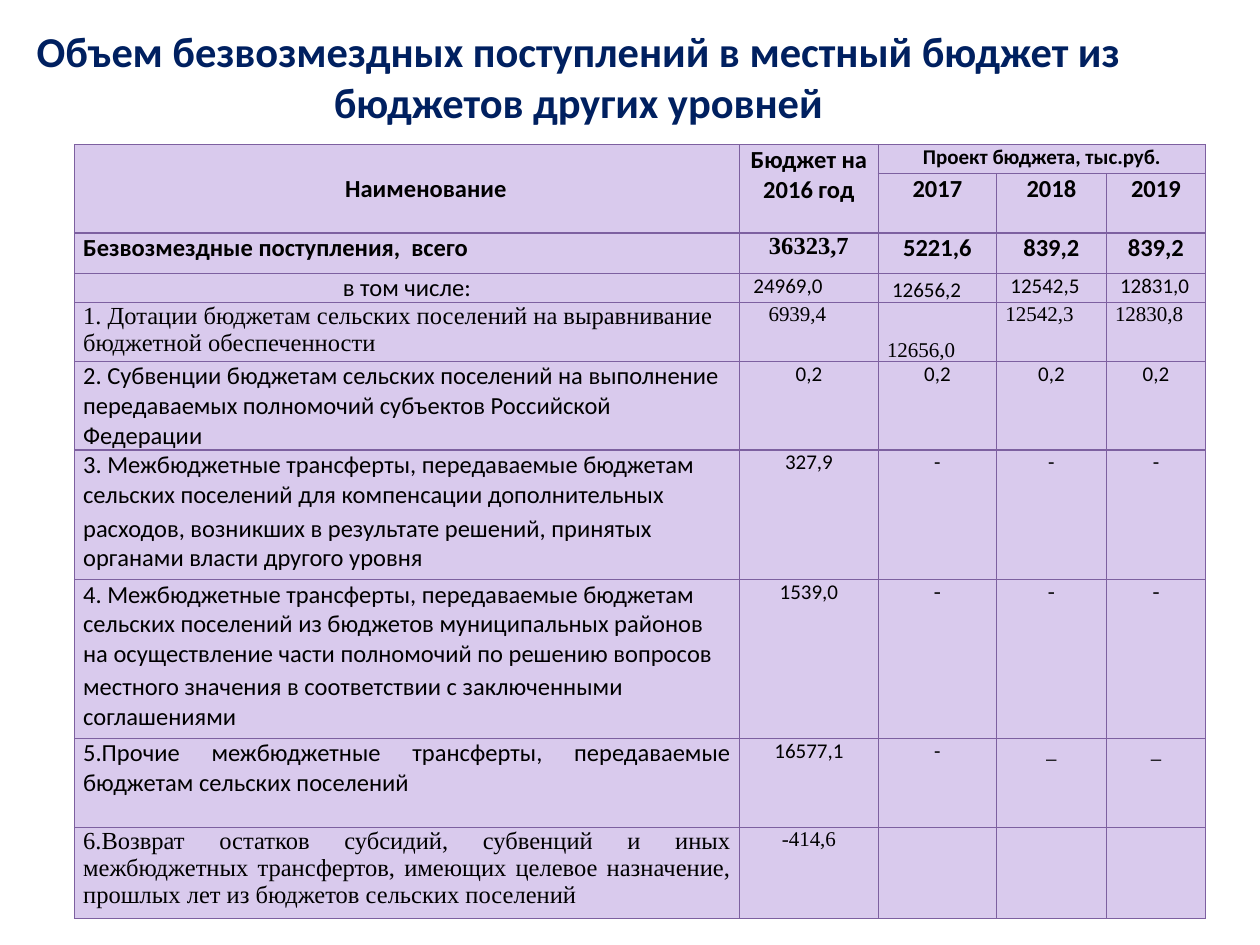
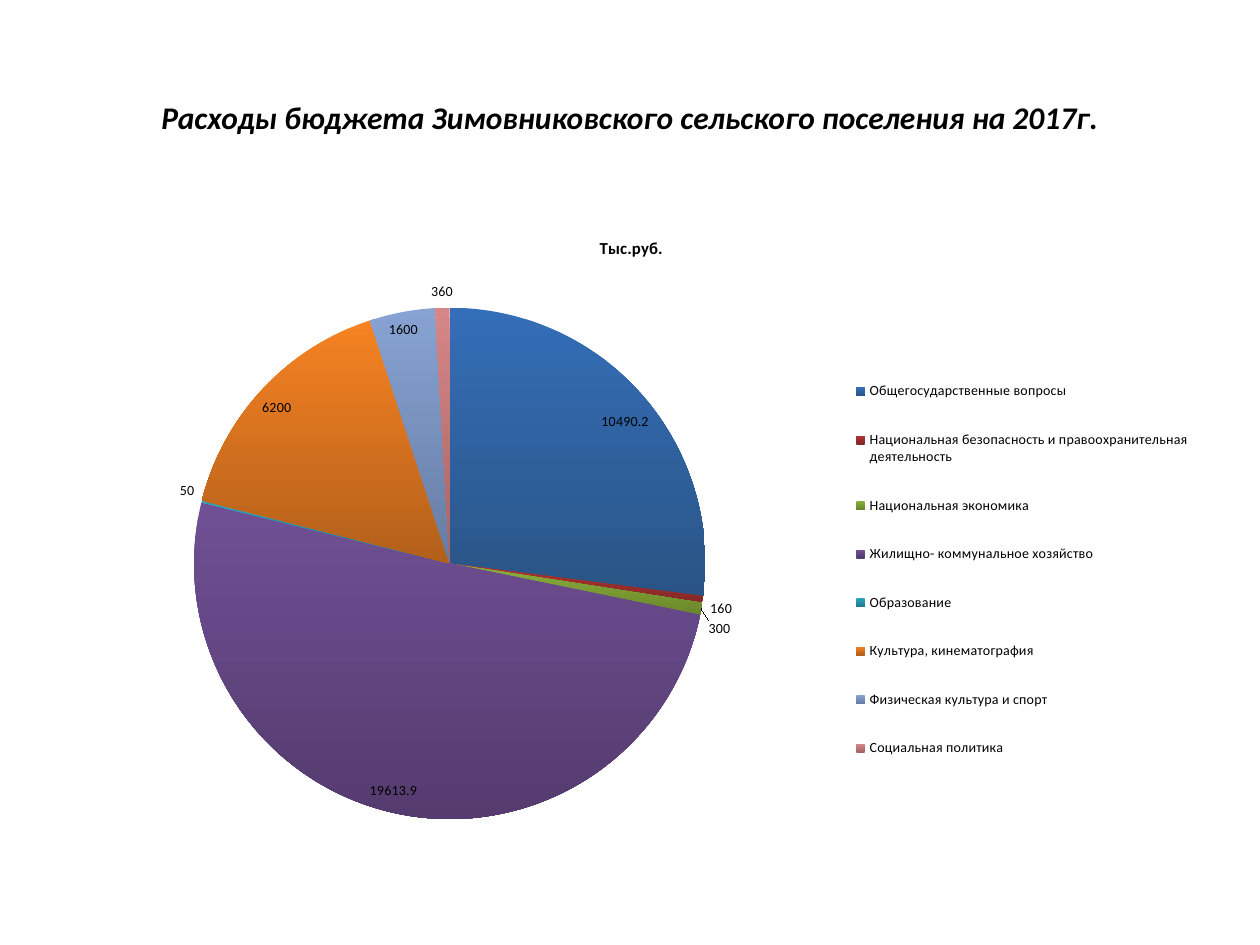
from lxml.etree import SubElement
from pptx import Presentation
from pptx.chart.data import CategoryChartData
from pptx.dml.color import RGBColor
from pptx.enum.chart import XL_CHART_TYPE as ChartType
from pptx.enum.chart import XL_LABEL_POSITION as LabelPos
from pptx.enum.chart import XL_LEGEND_POSITION as LegendPos
from pptx.enum.text import MSO_ANCHOR as Anchor
from pptx.enum.text import PP_ALIGN as Align
from pptx.oxml import parse_xml
from pptx.oxml.ns import nsdecls, qn
from pptx.util import Inches, Pt

BLACK = RGBColor(0x00, 0x00, 0x00)
NAVY = RGBColor(0x00, 0x20, 0x60)
LILAC = RGBColor(0xD9, 0xCA, 0xED)
BORDER = RGBColor(0x7D, 0x60, 0xA0)
SANS, SERIF = "Calibri", "Times New Roman"

# Budget table: names of the rows, then the amounts for 2016-2019
COLUMN_WIDTHS = [5.28, 1.1, 0.94, 0.87, 0.79]
ROW_HEIGHTS = [0.23, 0.47, 0.32, 0.23, 0.44, 0.7, 1.03, 1.26, 0.71, 0.72]
BUDGET = [
    ["Наименование", "Бюджет на 2016 год", "Проект бюджета, тыс.руб.", "", ""],
    ["", "", "2017", "2018", "2019"],
    ["Безвозмездные поступления,  всего", "36323,7", "5221,6", "839,2", "839,2"],
    ["в том числе:", "24969,0", "12656,2", "12542,5", "12831,0"],
    ["1. Дотации бюджетам сельских поселений на выравнивание бюджетной "
     "обеспеченности", "6939,4", "12656,0", "12542,3", "12830,8"],
    ["2. Субвенции бюджетам сельских поселений на выполнение передаваемых "
     "полномочий субъектов Российской Федерации", "0,2", "0,2", "0,2", "0,2"],
    ["3. Межбюджетные трансферты, передаваемые бюджетам сельских поселений "
     "для компенсации дополнительных\n"
     "расходов, возникших в результате решений, принятых органами власти "
     "другого уровня", "327,9", "-", "-", "-"],
    ["4. Межбюджетные трансферты, передаваемые бюджетам сельских поселений "
     "из бюджетов муниципальных районов на осуществление части полномочий "
     "по решению вопросов\n"
     "местного значения в соответствии с заключенными соглашениями",
     "1539,0", "-", "-", "-"],
    ["5.Прочие межбюджетные трансферты, передаваемые бюджетам сельских "
     "поселений", "16577,1", "-", "_", "_"],
    ["6.Возврат остатков субсидий, субвенций и иных межбюджетных "
     "трансфертов, имеющих целевое назначение, прошлых лет из бюджетов "
     "сельских поселений", "-414,6", "", "", ""],
]
HEADER_ROWS, TOTAL_ROW, INCLUDING_ROW, GRANTS_ROW = (0, 1), 2, 3, 4
SERIF_CELLS = ({(TOTAL_ROW, 1), (9, 0), (9, 1)}
               | {(GRANTS_ROW, col) for col in range(5)}
               | {(7, col) for col in (2, 3, 4)})
SPACE_BEFORE = {6: 2.4, 7: 1.6}
LEFT_INDENT = {(INCLUDING_ROW, col): 0.04 for col in range(1, 5)}
LEFT_INDENT[GRANTS_ROW, 1] = 0.16

# Expenses: section, amount, top and bottom colour of the slice
EXPENSES = [
    ("Общегосударственные вопросы", 10490.2, "346EB8", "2A5485"),
    ("Национальная безопасность и правоохранительная деятельность", 160,
     "AF3532", "852826"),
    ("Национальная экономика", 300, "8BB03C", "6A862B"),
    ("Жилищно- коммунальное хозяйство", 19613.9, "6F5095", "553B6E"),
    ("Образование", 50, "2BA3BE", "207C92"),
    ("Культура, кинематография", 6200, "F68222", "B3601B"),
    ("Физическая культура и спорт", 1600, "87A3D3", "667CA3"),
    ("Социальная политика", 360, "D68687", "A76465"),
]


def style_font(font, size, color=BLACK, bold=False, italic=False, name=SANS):
    font.name, font.size, font.bold, font.italic = name, Pt(size), bold, italic
    font.color.rgb = color


def add_title(slide, box, text, size, color, italic=False):
    frame = slide.shapes.add_textbox(*map(Inches, box)).text_frame
    frame.word_wrap = True
    frame.vertical_anchor = Anchor.MIDDLE
    heading = frame.paragraphs[0]
    heading.text, heading.alignment = text, Align.CENTER
    style_font(heading.font, size, color, bold=True, italic=italic)


def cell_alignment(row, col):
    if col == 0:
        if row in (0, INCLUDING_ROW):
            return Align.CENTER
        return Align.JUSTIFY if row >= 8 else Align.LEFT
    return Align.LEFT if row in (INCLUDING_ROW, GRANTS_ROW) else Align.CENTER


def add_borders(cell):
    props = cell._tc.get_or_add_tcPr()
    for position, side in enumerate(("lnL", "lnR", "lnT", "lnB")):
        props.insert(position, parse_xml(
            f'<a:{side} {nsdecls("a")} w="{Pt(0.75)}"><a:solidFill>'
            f'<a:srgbClr val="{BORDER}"/></a:solidFill></a:{side}>'))


def fill_cell(cell, row, col, text):
    cell.margin_left = cell.margin_right = Inches(0.07)
    cell.margin_top = cell.margin_bottom = 0
    cell.fill.solid()
    cell.fill.fore_color.rgb = LILAC
    add_borders(cell)
    if (row, col) == (0, 0):
        cell.vertical_anchor = Anchor.MIDDLE
    elif col == 2 and row in (INCLUDING_ROW, GRANTS_ROW):
        cell.vertical_anchor = Anchor.BOTTOM
    else:
        cell.vertical_anchor = Anchor.TOP

    cell.text = text
    large = col == 0 or row <= TOTAL_ROW and (row, col) != (0, 2)
    for paragraph in cell.text_frame.paragraphs:
        paragraph.alignment = cell_alignment(row, col)
        style_font(paragraph.font, 14 if large else 12, bold=row <= TOTAL_ROW,
                   name=SERIF if (row, col) in SERIF_CELLS else SANS)
        if col == 0 and row in SPACE_BEFORE:
            paragraph.space_before = Pt(SPACE_BEFORE[row])
        indent = 0.3 if (row, col) == (0, 0) else LEFT_INDENT.get((row, col))
        if indent:
            paragraph._p.get_or_add_pPr().set("indent", str(Inches(indent)))


def add_budget_table(slide, left, top):
    size = sum(COLUMN_WIDTHS), sum(ROW_HEIGHTS)
    table = slide.shapes.add_table(
        len(BUDGET), len(COLUMN_WIDTHS),
        *map(Inches, (left, top, *size))).table
    table.first_row = table.horz_banding = False
    for column, width in zip(table.columns, COLUMN_WIDTHS):
        column.width = Inches(width)
    for table_row, height in zip(table.rows, ROW_HEIGHTS):
        table_row.height = Inches(height)
    for row, texts in enumerate(BUDGET):
        for col, text in enumerate(texts):
            fill_cell(table.cell(row, col), row, col, text)
    # Header spans
    for col in (0, 1):
        table.cell(0, col).merge(table.cell(HEADER_ROWS[-1], col))
    table.cell(0, 2).merge(table.cell(0, 4))


def set_layout(element, x, y, w, h, inner=False):
    """Place a chart part by fractions of the chart area."""
    for old in element.findall(qn("c:layout")):
        element.remove(old)
    layout = parse_xml(f'<c:layout {nsdecls("c")}/>')
    manual = SubElement(layout, qn("c:manualLayout"))
    settings = [("layoutTarget", "inner")] if inner else []
    settings += [("xMode", "edge"), ("yMode", "edge"),
                 ("x", x), ("y", y), ("w", w), ("h", h)]
    for tag, value in settings:
        SubElement(manual, qn(f"c:{tag}")).set("val", str(value))
    # The layout leads the plot area and follows the legend position
    element.insert(0 if inner else 1, layout)


def add_expense_pie(slide, box):
    data = CategoryChartData()
    data.categories = [section for section, *_ in EXPENSES]
    data.add_series("Тыс.руб.", [amount for _, amount, *_ in EXPENSES])
    chart = slide.shapes.add_chart(
        ChartType.PIE, *map(Inches, box), data).chart
    style_font(chart.font, 8)

    chart.has_title = True
    caption = chart.chart_title.text_frame.paragraphs[0]
    caption.text = "Тыс.руб."
    style_font(caption.font, 9.6, bold=True)

    # Slices
    pie = chart.plots[0]
    pie.vary_by_categories = True
    for index, (*_, upper, lower) in enumerate(EXPENSES):
        fill = pie.series[0].points[index].format.fill
        fill.gradient()
        fill.gradient_angle = 270
        for stop, shade in zip(fill.gradient_stops, (upper, lower)):
            stop.color.rgb = RGBColor.from_string(shade)
    pie.has_data_labels = True
    labels = pie.data_labels
    labels.show_value, labels.show_percentage = True, False
    labels.position = LabelPos.BEST_FIT
    style_font(labels.font, 8)

    # Legend
    chart.has_legend = True
    chart.legend.position = LegendPos.RIGHT
    chart.legend.include_in_layout = False
    style_font(chart.legend.font, 8)
    set_layout(chart.legend._element, 0.69, 0.22, 0.31, 0.7)
    plot_area = chart._chartSpace.chart.plotArea
    set_layout(plot_area, 0.11, 0.15, 0.46, 0.82, inner=True)


def build_income_slide(slide):
    add_title(slide, (0.09, 0.1, 9, 1.01),
              "Объем безвозмездных поступлений в местный бюджет из бюджетов "
              "других уровней", 24.3, NAVY)
    add_budget_table(slide, 0.59, 1.15)


def build_expense_slide(slide):
    add_title(slide, (0.5, 0.3, 9, 1.25),
              "Расходы бюджета Зимовниковского сельского поселения на 2017г.",
              18, BLACK, italic=True)
    add_expense_pie(slide, (0.51, 1.7, 9, 4.95))


def main():
    deck = Presentation()
    deck.slide_width, deck.slide_height = Inches(10), Inches(7.5)
    blank = deck.slide_layouts[6]
    for build in (build_income_slide, build_expense_slide):
        build(deck.slides.add_slide(blank))
    deck.save("out.pptx")


if __name__ == "__main__":
    main()
